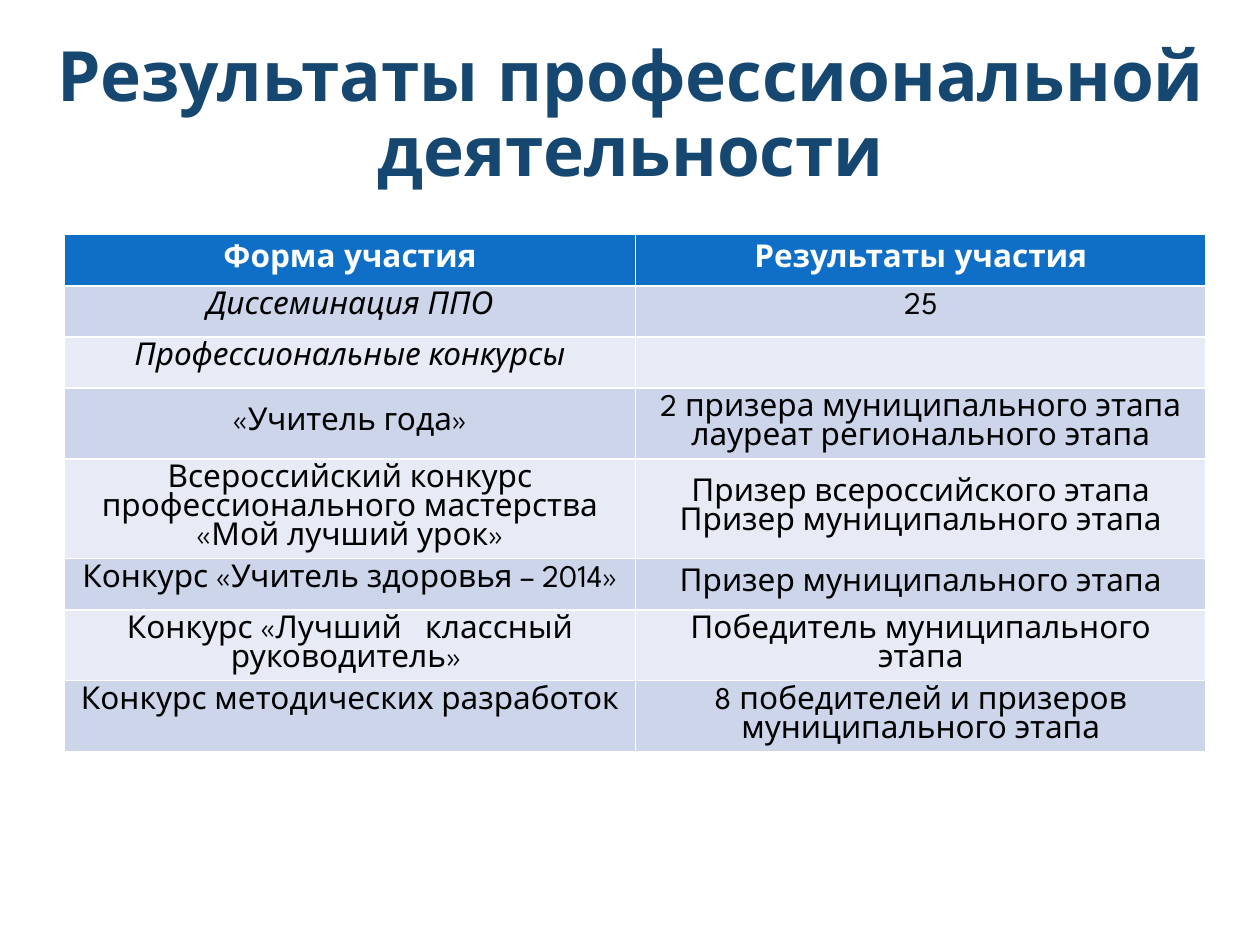
from pptx import Presentation
from pptx.dml.color import RGBColor
from pptx.enum.text import MSO_ANCHOR as Anchor, PP_ALIGN as Align
from pptx.util import Pt

FONT = "League Spartan"
TITLE = "Результаты профессиональной деятельности"
HEADER = ("Форма участия", "Результаты участия")
ROWS = [
    ("Диссеминация ППО", "25"),
    ("Профессиональные конкурсы", ""),
    ("«Учитель года»",
     "2 призера муниципального этапа\nлауреат регионального этапа"),
    ("Всероссийский конкурс профессионального мастерства\n«Мой лучший урок»",
     "Призер всероссийского этапа\nПризер муниципального этапа"),
    ("Конкурс «Учитель здоровья – 2014»", "Призер муниципального этапа"),
    ("Конкурс «Лучший   классный руководитель» ",
     "Победитель муниципального этапа"),
    ("Конкурс методических разработок",
     "8 победителей и призеров муниципального этапа"),
]
LINES = [1, 1, 1, 2, 3, 1, 2, 2]
HEIGHTS = {1: 29.2, 2: 40.5, 3: 57}
ITALIC_ROWS = {1, 2}
MIDDLE_CELLS = {(0, 0), (0, 1), (3, 0), (4, 1), (5, 1), (6, 1), (7, 1)}
LEFT, TOP, COLUMN_WIDTH = 36.9, 134.1, 326.2
BANDS = ("E7EBF5", "CCD5EA")


def color(value):
    return RGBColor.from_string(value)


def write(frame, text, size=18, ink="000000", bold=False, italic=False,
          spacing=Pt(16.6)):
    for index, line in enumerate(text.split("\n")):
        para = frame.add_paragraph() if index else frame.paragraphs[0]
        para.alignment = Align.CENTER
        para.line_spacing = spacing
        para.font.size = Pt(size)
        para.font.name = FONT
        if line:
            span = para.add_run()
            span.text = line
            span.font.name = FONT
            span.font.size = Pt(size)
            span.font.bold = bold
            span.font.italic = italic
            span.font.color.rgb = color(ink)


def add_title(page):
    title = page.shapes.title
    title.left, title.top = Pt(20.2), Pt(21.6)
    title.width, title.height = Pt(680.4), Pt(90)
    title.text_frame.word_wrap = True
    title.text_frame.vertical_anchor = Anchor.MIDDLE
    write(title.text_frame, TITLE, size=39.6, ink="164770", bold=True,
          spacing=0.9)


def add_results(page):
    content = [HEADER, *ROWS]
    heights = [HEIGHTS[count] for count in LINES]
    table = page.shapes.add_table(
        len(content), len(HEADER), Pt(LEFT), Pt(TOP),
        Pt(COLUMN_WIDTH * len(HEADER)), Pt(sum(heights))).table
    for column in table.columns:
        column.width = Pt(COLUMN_WIDTH)
    for r, texts in enumerate(content):
        table.rows[r].height = Pt(heights[r])
        for c, text in enumerate(texts):
            cell = table.cell(r, c)
            cell.fill.solid()
            cell.fill.fore_color.rgb = color(BANDS[r % 2] if r else "0F6FC6")
            middle = (r, c) in MIDDLE_CELLS
            cell.vertical_anchor = Anchor.MIDDLE if middle else Anchor.TOP
            write(cell.text_frame, text, ink="000000" if r else "FFFFFF",
                  bold=r == 0, italic=c == 0 and r in ITALIC_ROWS)


def main():
    deck = Presentation()
    deck.slide_width, deck.slide_height = Pt(720), Pt(540)
    page = deck.slides.add_slide(deck.slide_layouts[5])
    add_title(page)
    add_results(page)
    deck.save("out.pptx")


if __name__ == "__main__":
    main()
